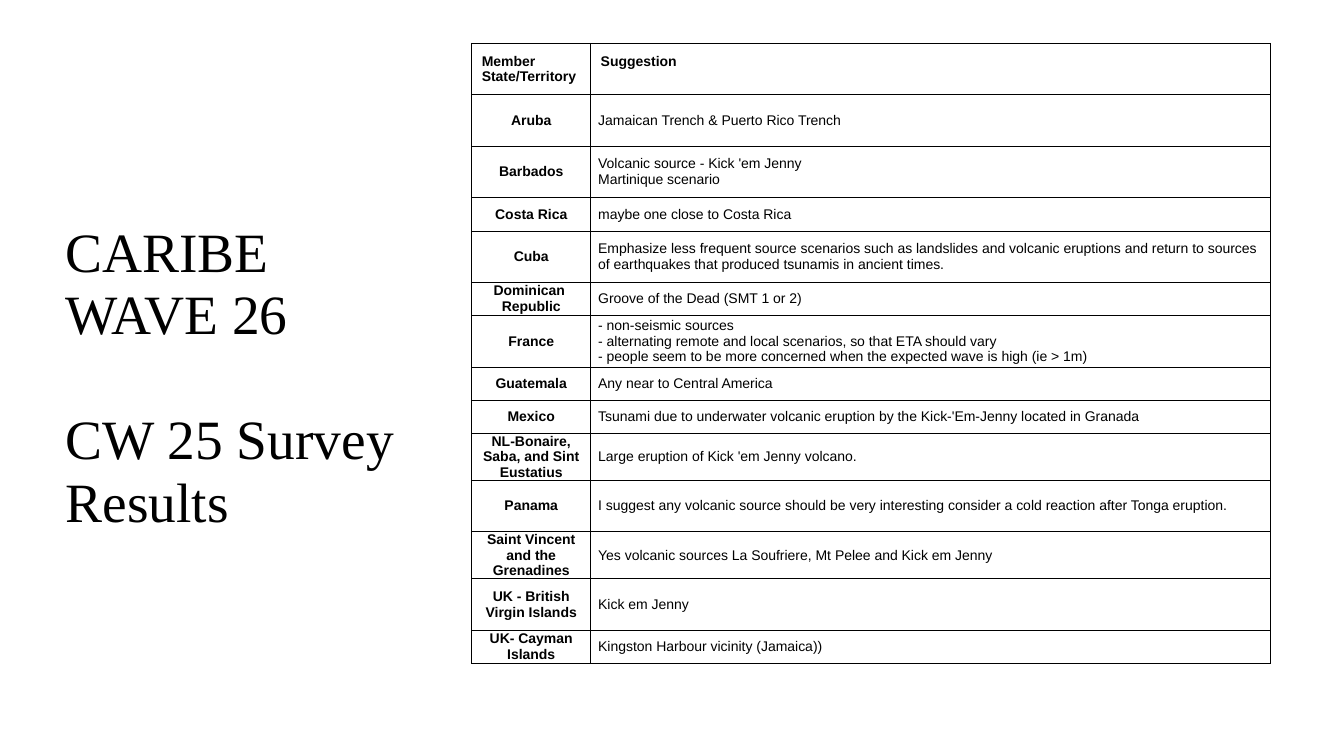
"""Build the CARIBE WAVE 26 survey results slide."""
from dataclasses import dataclass

import pptx
import pptx.dml.color
import pptx.enum.text
import pptx.oxml.ns
import pptx.util
from lxml import etree

Pt = pptx.util.Pt
Align = pptx.enum.text.PP_ALIGN
Anchor = pptx.enum.text.MSO_ANCHOR
BLACK = pptx.dml.color.RGBColor(0, 0, 0)
TALL = 36.72
SHORT = 23.76
TITLE_LINES = ("CARIBE WAVE 26", "", "CW 25 Survey Results")


@dataclass(frozen=True)
class Answer:
    member: str
    suggestions: tuple[str, ...]
    height: float = SHORT
    member_gap: float = 5
    suggestion_gap: float = 0


@dataclass(frozen=True)
class CellStyle:
    bold: bool
    align: Align = Align.LEFT
    anchor: Anchor = Anchor.MIDDLE
    side_margin: float = 5.4
    end_margin: float = 0
    border: float = 0.5
    gap: float = 0


HEADER = CellStyle(True, anchor=Anchor.TOP, side_margin=7.2, end_margin=7.2, border=0.75)

ANSWERS = (
    Answer("Aruba", ("Jamaican Trench & Puerto Rico Trench",), TALL),
    Answer("Barbados", ("Volcanic source - Kick 'em Jenny", "Martinique scenario"), TALL),
    Answer("Costa Rica", ("maybe one close to Costa Rica",)),
    Answer("Cuba", (
        "Emphasize less frequent source scenarios such as landslides and volcanic eruptions "
        "and return to sources of earthquakes that produced tsunamis in ancient times.",), TALL),
    Answer("Dominican \nRepublic", ("Groove of the Dead (SMT 1 or 2)",)),
    Answer("France", (
        "- non-seismic sources",
        "- alternating remote and local scenarios, so that ETA should vary",
        "- people seem to be more concerned when the expected wave is high (ie > 1m)"), TALL),
    Answer("Guatemala", ("Any near to Central America",)),
    Answer("Mexico", (
        "Tsunami due to underwater volcanic eruption by the Kick-'Em-Jenny located in Granada",)),
    Answer("NL-Bonaire, Saba, and Sint Eustatius",
           ("Large eruption of Kick 'em Jenny volcano.",), member_gap=0),
    Answer("Panama", (
        "I suggest any volcanic source should be very interesting consider a cold reaction "
        "after Tonga eruption.",), TALL),
    Answer("Saint Vincent and the Grenadines",
           ("Yes volcanic sources La Soufriere, Mt Pelee and Kick em Jenny",)),
    Answer("UK - British Virgin Islands", ("Kick em Jenny",), TALL),
    Answer("UK- Cayman Islands", ("Kingston Harbour vicinity (Jamaica))",), suggestion_gap=5),
)


def add_span(para, text: str, font_name: str, size: float, bold: bool = False) -> None:
    """Add one formatted run to a paragraph."""
    span = para.add_run()
    span.text = text
    span.font.name = font_name
    span.font.size = Pt(size)
    span.font.bold = bold
    span.font.color.rgb = BLACK


def add_border(cell, side: str, width: float) -> None:
    """Draw one solid black edge of a table cell."""
    qualify = pptx.oxml.ns.qn
    properties = cell._tc.get_or_add_tcPr()
    line = etree.SubElement(properties, qualify(f"a:ln{side}"), w=str(Pt(width)))
    fill = etree.SubElement(line, qualify("a:solidFill"))
    etree.SubElement(fill, qualify("a:srgbClr"), val=str(BLACK))


def fill_cell(cell, lines: tuple[str, ...], style: CellStyle) -> None:
    """Write and format a table cell."""
    cell.margin_left = cell.margin_right = Pt(style.side_margin)
    cell.margin_top = cell.margin_bottom = Pt(style.end_margin)
    cell.vertical_anchor = style.anchor
    for side in "LRTB":
        add_border(cell, side, 0.5 if side == "B" else style.border)
    cell.fill.background()
    frame = cell.text_frame
    for index, text in enumerate(lines):
        para = frame.add_paragraph() if index else frame.paragraphs[0]
        para.alignment = style.align
        para.space_before = para.space_after = Pt(style.gap)
        for part_index, part in enumerate(text.split("\n")):
            if part_index:
                para.add_line_break()
            add_span(para, part, "Arial", 10, style.bold)


def add_title(page) -> None:
    """Place and write the slide title."""
    box = page.shapes.title
    box.left, box.top, box.width, box.height = Pt(39.6), Pt(218.16), Pt(267.84), Pt(104.4)
    frame = box.text_frame
    frame.word_wrap = True
    frame.auto_size = pptx.enum.text.MSO_AUTO_SIZE.NONE
    frame.vertical_anchor = Anchor.MIDDLE
    frame.margin_left = frame.margin_right = Pt(7.2)
    frame.margin_top = frame.margin_bottom = Pt(3.6)
    for index, text in enumerate(TITLE_LINES):
        para = frame.add_paragraph() if index else frame.paragraphs[0]
        para.alignment = Align.LEFT
        para.line_spacing = 0.94
        para.space_before = Pt(0)
        para.font.size = Pt(39.6)
        para.font.name = "Times New Roman"
        if text:
            add_span(para, text, "Times New Roman", 39.6)


def add_survey_table(page) -> None:
    """Add the table of suggestions by member."""
    widths = (84.96, 485.28)
    heights = (TALL, *(answer.height for answer in ANSWERS))
    table = page.shapes.add_table(len(heights), len(widths), Pt(336.96), Pt(30.96),
                                  Pt(sum(widths)), Pt(sum(heights))).table
    table.first_row = table.horz_banding = False
    for column, width in zip(table.columns, widths):
        column.width = Pt(width)
    for row, height in zip(table.rows, heights):
        row.height = Pt(height)
    for column, heading in enumerate(("Member State/Territory", "Suggestion")):
        fill_cell(table.cell(0, column), (heading,), HEADER)
    for row, answer in enumerate(ANSWERS, 1):
        fill_cell(table.cell(row, 0), (answer.member,),
                  CellStyle(True, Align.CENTER, gap=answer.member_gap))
        fill_cell(table.cell(row, 1), answer.suggestions,
                  CellStyle(False, gap=answer.suggestion_gap))


def main() -> None:
    """Create and save the deck."""
    deck = pptx.Presentation()
    deck.slide_width, deck.slide_height = Pt(960), Pt(540)
    page = deck.slides.add_slide(deck.slide_layouts.get_by_name("Title Only"))
    add_title(page)
    add_survey_table(page)
    deck.save("out.pptx")


if __name__ == "__main__":
    main()
